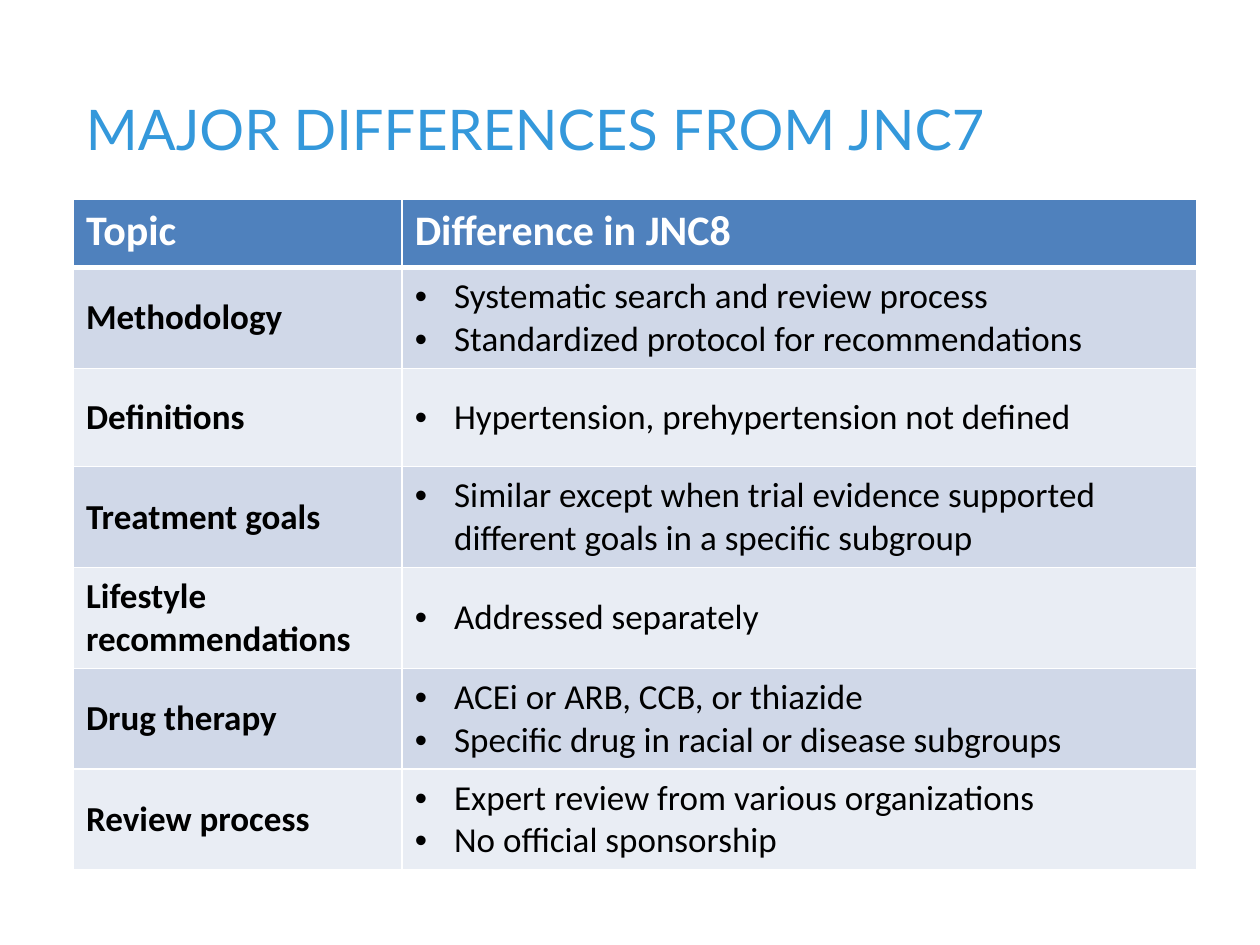
from lxml import etree
from pptx import Presentation
from pptx.dml import color
from pptx.enum import text
from pptx.oxml import ns
from pptx.util import Pt

TITLE = "MAJOR DIFFERENCES FROM JNC7"
HEADINGS = ["Topic", "Difference in JNC8"]
TOPICS = [
    ("Methodology", ["Systematic search and review process",
                     "Standardized protocol for recommendations"]),
    ("Definitions", ["Hypertension, prehypertension not defined"]),
    ("Treatment goals", ["Similar except when trial evidence supported "
                         "different goals in a specific subgroup"]),
    ("Lifestyle recommendations", ["Addressed separately"]),
    ("Drug therapy", ["ACEi or ARB, CCB, or thiazide",
                      "Specific drug in racial or disease subgroups"]),
    ("Review process", ["Expert review from various organizations",
                        "No official sponsorship"]),
]
COLUMNS = [187.8, 454.2]
ROWS = [38.9, 57.6, 56.2] + [57.6] * 4
BANDS = ["D0D8E8", "E9EDF4"]
INDENT = 22.5


def rgb(value):
    return color.RGBColor.from_string(value)


def child(parent, tag, **attributes):
    return etree.SubElement(parent, ns.qn(tag), **attributes)


def write(para, words, font="Calibri", size=20, ink="000000", bold=False, bullet=False):
    if bullet:
        props = para._p.get_or_add_pPr()
        props.set("marL", str(Pt(INDENT)))
        props.set("indent", str(-Pt(INDENT)))
        child(props, "a:buFont", typeface="Arial")
        child(props, "a:buChar", char="•")
    span = para.add_run()
    span.text = words
    span.font.name = font
    span.font.size = Pt(size)
    span.font.bold = bold
    span.font.color.rgb = rgb(ink)


def style_cell(cell, fill, bottom=1, anchor=text.MSO_ANCHOR.MIDDLE):
    cell.vertical_anchor = anchor
    props = cell._tc.get_or_add_tcPr()
    for side, width in (("L", 1), ("R", 1), ("T", 1), ("B", bottom)):
        line = child(props, "a:ln" + side, w=str(Pt(width)))
        child(child(line, "a:solidFill"), "a:srgbClr", val="FFFFFF")
    cell.fill.solid()
    cell.fill.fore_color.rgb = rgb(fill)


deck = Presentation()
deck.slide_width, deck.slide_height = Pt(720), Pt(540)
page = deck.slides.add_slide(deck.slide_layouts[6])

box = page.shapes.add_textbox(Pt(42), Pt(21.6), Pt(636), Pt(74.2))
box.text_frame.word_wrap = True
box.text_frame.vertical_anchor = text.MSO_ANCHOR.BOTTOM
write(box.text_frame.paragraphs[0], TITLE, font="Lato", size=32, ink="3498DB")

table = page.shapes.add_table(len(ROWS), len(COLUMNS), Pt(42), Pt(114),
                              Pt(sum(COLUMNS)), Pt(sum(ROWS))).table
for column, width in zip(table.columns, COLUMNS):
    column.width = Pt(width)
for row, height in zip(table.rows, ROWS):
    row.height = Pt(height)

for index, heading in enumerate(HEADINGS):
    cell = table.cell(0, index)
    style_cell(cell, "4F81BD", bottom=3, anchor=text.MSO_ANCHOR.TOP)
    write(cell.text_frame.paragraphs[0], heading, size=24, ink="FFFFFF", bold=True)

for index, (topic, differences) in enumerate(TOPICS):
    name, detail = table.cell(index + 1, 0), table.cell(index + 1, 1)
    for cell in (name, detail):
        style_cell(cell, BANDS[index % 2], bottom=1)
        if index == 0:
            cell._tc.tcPr.find(ns.qn("a:lnT")).set("w", str(Pt(3)))
    write(name.text_frame.paragraphs[0], topic, bold=True)
    for number, difference in enumerate(differences):
        frame = detail.text_frame
        para = frame.add_paragraph() if number else frame.paragraphs[0]
        write(para, difference, bullet=True)

deck.save("out.pptx")
